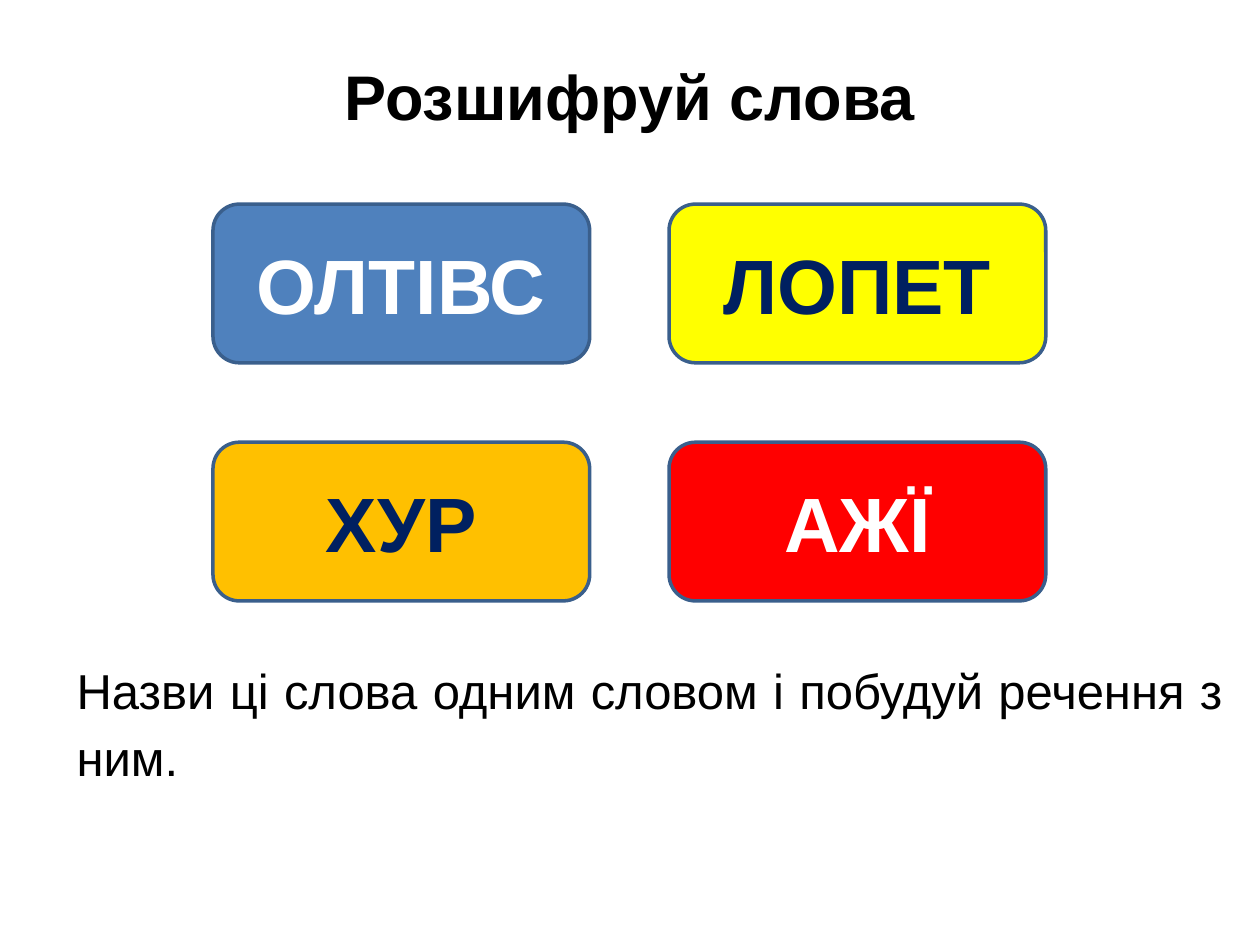
"""Build a word-puzzle slide with four scrambled words and a task."""
from dataclasses import dataclass

from pptx import Presentation
from pptx.dml.color import RGBColor
from pptx.enum.shapes import MSO_SHAPE
from pptx.enum.text import MSO_ANCHOR, PP_ALIGN
from pptx.slide import Slide
from pptx.text.text import TextFrame
from pptx.util import Inches, Pt

ROUNDED = MSO_SHAPE.ROUNDED_RECTANGLE
MIDDLE, TOP = MSO_ANCHOR.MIDDLE, MSO_ANCHOR.TOP
CENTER, JUSTIFY = PP_ALIGN.CENTER, PP_ALIGN.JUSTIFY

BLACK = RGBColor(0x00, 0x00, 0x00)
WHITE = RGBColor(0xFF, 0xFF, 0xFF)
NAVY = RGBColor(0x00, 0x20, 0x60)
BLUE = RGBColor(0x4F, 0x81, 0xBD)
YELLOW = RGBColor(0xFF, 0xFF, 0x00)
ORANGE = RGBColor(0xFF, 0xC0, 0x00)
RED = RGBColor(0xFF, 0x00, 0x00)
OUTLINE = RGBColor(0x3A, 0x5F, 0x8C)

FONT = "Arial"
COLUMNS = 2
CARD_LEFT, CARD_TOP = 1.69, 1.62
CARD_WIDTH, CARD_HEIGHT = 2.99, 1.26
COLUMN_STEP, ROW_STEP = 3.62, 1.89


@dataclass(frozen=True)
class WordCard:
    word: str
    fill: RGBColor
    color: RGBColor


CARDS = [
    WordCard("ОЛТІВС", BLUE, WHITE),
    WordCard("ЛОПЕТ", YELLOW, NAVY),
    WordCard("ХУР", ORANGE, NAVY),
    WordCard("АЖЇ", RED, WHITE),
]


def write_text(frame: TextFrame, text: str, size: int, color: RGBColor,
               bold: bool = True, alignment: PP_ALIGN = CENTER,
               anchor: MSO_ANCHOR = MIDDLE) -> None:
    frame.text = text
    frame.word_wrap = True
    frame.vertical_anchor = anchor
    paragraph = frame.paragraphs[0]
    paragraph.alignment = alignment
    font = paragraph.font
    font.name, font.size, font.bold = FONT, Pt(size), bold
    font.color.rgb = color


def add_title(slide: Slide, text: str) -> None:
    title = slide.shapes.title
    title.left, title.top = Inches(0.5), Inches(0.13)
    title.width, title.height = Inches(9), Inches(1.25)
    write_text(title.text_frame, text, 36, BLACK)


def add_card(slide: Slide, card: WordCard, index: int) -> None:
    row, column = divmod(index, COLUMNS)
    shape = slide.shapes.add_shape(
        ROUNDED,
        Inches(CARD_LEFT + column * COLUMN_STEP),
        Inches(CARD_TOP + row * ROW_STEP),
        Inches(CARD_WIDTH), Inches(CARD_HEIGHT))
    shape.shadow.inherit = False
    shape.fill.solid()
    shape.fill.fore_color.rgb = card.fill
    shape.line.color.rgb = OUTLINE
    shape.line.width = Pt(2)
    write_text(shape.text_frame, card.word, 44, card.color)


def add_task(slide: Slide, text: str) -> None:
    box = slide.shapes.add_textbox(
        Inches(0.51), Inches(5.12), Inches(9.29), Inches(1.47))
    write_text(box.text_frame, text, 28, BLACK, False, JUSTIFY, TOP)
    box.text_frame.paragraphs[0].line_spacing = 1.15


def main() -> None:
    presentation = Presentation()
    presentation.slide_width = Inches(10)
    presentation.slide_height = Inches(7.5)
    slide = presentation.slides.add_slide(presentation.slide_layouts[5])
    add_title(slide, "Розшифруй слова")
    for index, card in enumerate(CARDS):
        add_card(slide, card, index)
    add_task(slide, "Назви ці слова одним словом і побудуй речення з ним.")
    presentation.save("out.pptx")


if __name__ == "__main__":
    main()
